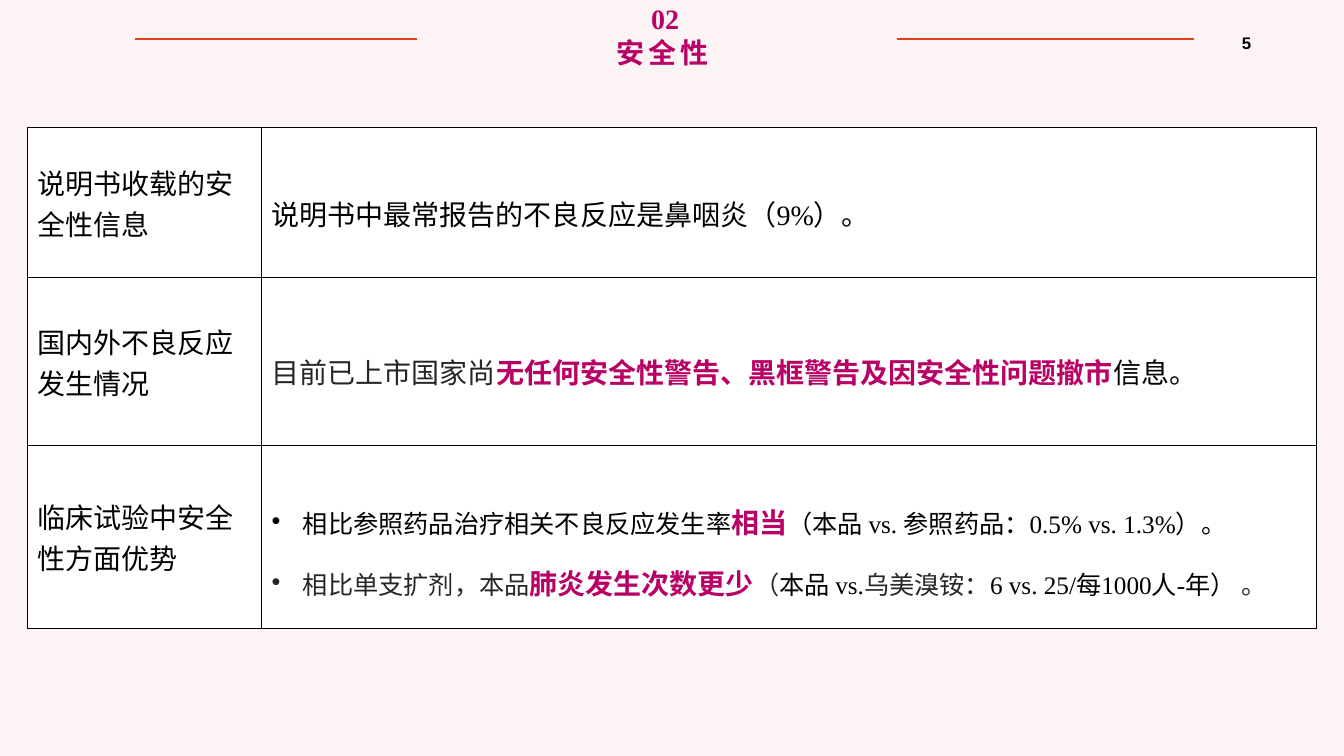
from lxml.etree import SubElement
from pptx import Presentation
from pptx.dml.color import RGBColor
from pptx.enum.shapes import MSO_CONNECTOR
from pptx.enum.text import MSO_ANCHOR, MSO_AUTO_SIZE, PP_ALIGN
from pptx.oxml.ns import qn
from pptx.util import Cm, Pt

HUES = {"page": "FCF3F5", "pink": "B80065", "gold": "F9C235", "red": "E4401D",
        "black": "000000", "gray": "262626", "white": "FFFFFF"}
SERIF, SANS = "Times New Roman", "Arial"


class Deck:
    def __init__(self):
        self.show = Presentation()
        self.show.slide_width, self.show.slide_height = Cm(33.87), Cm(19.05)
        self.slide = self.show.slides.add_slide(self.show.slide_layouts[6])
        self.paint(self.slide.background.fill, "page")

    def paint(self, fill, hue):
        fill.solid()
        fill.fore_color.rgb = RGBColor.from_string(HUES[hue])

    def edge(self, node, tag, hue, width):
        """Add a solid line element to a cell or run property node."""
        line = SubElement(node, qn(tag), w=str(Pt(width)))
        fill = SubElement(line, qn("a:solidFill"))
        SubElement(fill, qn("a:srgbClr"), val=HUES[hue])
        return line

    def run(self, para, text, size=20, hue="black", bold=False, face=SERIF):
        run = para.add_run()
        run.text = text
        font = run.font
        font.size, font.bold, font.name = Pt(size), bold, face
        font.color.rgb = RGBColor.from_string(HUES[hue])
        return run

    def text(self, box, words, align=PP_ALIGN.CENTER, inset=True, grow=True, **style):
        frame = self.slide.shapes.add_textbox(*map(Cm, box)).text_frame
        frame.word_wrap = True
        frame.auto_size = MSO_AUTO_SIZE.SHAPE_TO_FIT_TEXT if grow else MSO_AUTO_SIZE.NONE
        if not inset:
            frame.margin_left = frame.margin_right = 0
            frame.margin_top = frame.margin_bottom = 0
        para = frame.paragraphs[0]
        para.alignment = align
        return self.run(para, words, **style)

    def rule(self, left, right, top):
        line = self.slide.shapes.add_connector(
            MSO_CONNECTOR.STRAIGHT, Cm(left), Cm(top), Cm(right), Cm(top))
        line.line.width = Pt(1.25)
        line.line.color.rgb = RGBColor.from_string(HUES["red"])
        SubElement(line.element.spPr, qn("a:effectLst"))

    def bullet(self, para):
        props = para._p.get_or_add_pPr()
        props.set("marL", str(Cm(0.79)))
        props.set("indent", str(-Cm(0.79)))
        SubElement(props, qn("a:buFont"), typeface=SANS)
        SubElement(props, qn("a:buChar"), char="•")

    def cell(self, cell, paras, space=None, dots=False):
        frame = cell.text_frame
        for i, runs in enumerate(paras):
            para = frame.add_paragraph() if i else frame.paragraphs[0]
            if dots:
                self.bullet(para)
            if space:
                para.line_spacing = space
            for words, style in runs:
                self.run(para, words, **style)
        cell.vertical_anchor = MSO_ANCHOR.TOP if dots else MSO_ANCHOR.MIDDLE
        if dots:
            cell.margin_top = Cm(0.89)
        props = cell._tc.get_or_add_tcPr()
        for side in "LRTB":
            self.edge(props, f"a:ln{side}", "black", 1)
        self.paint(cell.fill, "white")

    def table(self, left, top, cols, rows, data):
        table = self.slide.shapes.add_table(
            len(rows), len(cols), Cm(left), Cm(top), Cm(sum(cols)), Cm(sum(rows))).table
        table.first_row = table.horz_banding = False
        for col, width in zip(table.columns, cols):
            col.width = Cm(width)
        for i, (high, (label, paras)) in enumerate(zip(rows, data)):
            table.rows[i].height = Cm(high)
            self.cell(table.cell(i, 0), [[(label, {"face": SANS})]])
            self.cell(table.cell(i, 1), paras, space=1.5, dots=len(paras) > 1)


def main():
    deck = Deck()
    head = {"hue": "pink", "bold": True}
    mark = deck.text((9.19, -0.08, 15.14, 1.12), "02", **head)
    outline = deck.edge(mark.font._element, "a:ln", "gold", 0.75)
    mark.font._element.insert(0, outline)
    title = deck.text((15.24, 0.89, 2.92, 0.86), "安全性", inset=False, **head)
    title.font._element.set("spc", "300")
    for left, right in ((22.61, 30.1), (3.4, 10.52)):
        deck.rule(left, right, 0.99)
    deck.text((24.16, 0.69, 7.62, 1.02), "5", align=PP_ALIGN.RIGHT, grow=False,
              size=12, bold=True, face=SANS)

    small = {"size": 18}
    gray = {"size": 18, "hue": "gray"}
    data = [
        ("说明书收载的安全性信息", [[("说明书中最常报告的不良反应是鼻咽炎（9%）。", {})]]),
        ("国内外不良反应发生情况", [[
            ("目前已上市国家尚", {"hue": "gray"}),
            ("无任何安全性警告、黑框警告及因安全性问题撤市", head),
            ("信息。", {})]]),
        ("临床试验中安全性方面优势", [
            [("相比参照药品治疗相关不良反应发生率", small), ("相当", head),
             ("（本品 vs. 参照药品：0.5% vs. 1.3%）。", small)],
            [("相比单支扩剂，本品", gray), ("肺炎发生次数更少", head), ("（", gray),
             ("本品 vs.", small), ("乌美溴铵：", gray),
             ("6 vs. 25/每1000人-年） ", small), ("。", gray)]]),
    ]
    deck.table(0.69, 3.21, (5.9, 26.59), (3.79, 4.22, 4.62), data)
    deck.show.save("out.pptx")


if __name__ == "__main__":
    main()
